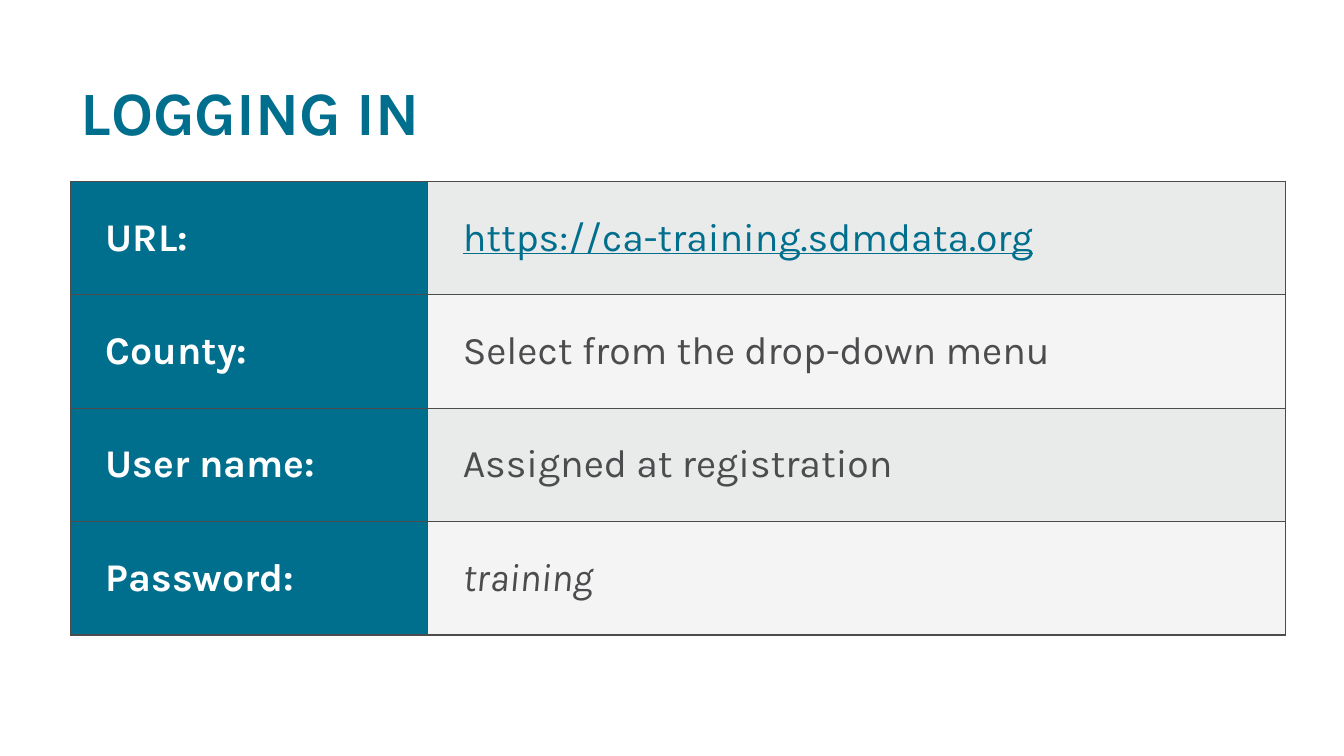
"""Build the slide that lists the login details for the training site."""
from pptx import Presentation
from pptx.dml.color import RGBColor
from pptx.enum.text import MSO_ANCHOR, PP_ALIGN
from pptx.oxml import parse_xml
from pptx.oxml.ns import nsdecls
from pptx.util import Inches, Pt

MIDDLE = MSO_ANCHOR.MIDDLE
LEFT = PP_ALIGN.LEFT
TITLE_ONLY = 5

FONT = "Karla"
TEAL = RGBColor(0x00, 0x6E, 0x8D)
WHITE = RGBColor(0xFF, 0xFF, 0xFF)
CHARCOAL = RGBColor(0x4C, 0x4C, 0x4E)
BANDS = (RGBColor(0xE9, 0xEA, 0xEA), RGBColor(0xF4, 0xF4, 0xF5))

MARGIN = Inches(0.7)
CONTENT_WIDTH = Inches(12.05)
TABLE_HEIGHT = Inches(4.5)
LABEL_WIDTH = Inches(3.54)
CELL_INDENT = Inches(0.25)

LOGIN_DETAILS = (
    ("URL:", "https://ca-training.sdmdata.org", {"color": TEAL, "underline": True}),
    ("County:", "Select from the drop-down menu", {}),
    ("User name:", "Assigned at registration", {}),
    ("Password:", "training", {"italic": True}),
)


def format_runs(paragraph, size, color, bold=False, italic=False, underline=False):
    for run in paragraph.runs:
        font = run.font
        font.name = FONT
        font.size = Pt(size)
        font.color.rgb = color
        font.bold = bold
        font.italic = italic
        font.underline = underline


def add_title(slide, text):
    title = slide.shapes.title
    title.left, title.top = MARGIN, Inches(0.4)
    title.width, title.height = CONTENT_WIDTH, Inches(1.4)
    title.text_frame.text = text
    title.text_frame.vertical_anchor = MIDDLE
    paragraph = title.text_frame.paragraphs[0]
    paragraph.alignment = LEFT
    format_runs(paragraph, 44, TEAL, bold=True)


def add_borders(cell):
    properties = cell._tc.get_or_add_tcPr()
    for side in ("lnL", "lnR", "lnT", "lnB"):
        properties.append(parse_xml(
            f'<a:{side} {nsdecls("a")} w="{Pt(1)}"><a:solidFill>'
            f'<a:srgbClr val="{CHARCOAL}"/></a:solidFill></a:{side}>'))


def fill_cell(cell, text, fill, color, **style):
    add_borders(cell)
    cell.fill.solid()
    cell.fill.fore_color.rgb = fill
    cell.vertical_anchor = MIDDLE
    cell.text_frame.text = text
    paragraph = cell.text_frame.paragraphs[0]
    paragraph._p.get_or_add_pPr().set("marL", str(CELL_INDENT))
    format_runs(paragraph, 28, color, **style)


def add_login_table(slide):
    frame = slide.shapes.add_table(
        len(LOGIN_DETAILS), 2, MARGIN, Inches(1.8), CONTENT_WIDTH, TABLE_HEIGHT)
    table = frame.table
    table.first_row = False
    table.horz_banding = False
    table.columns[0].width = LABEL_WIDTH
    table.columns[1].width = CONTENT_WIDTH - LABEL_WIDTH
    for row, (label, value, style) in enumerate(LOGIN_DETAILS):
        fill_cell(table.cell(row, 0), label, TEAL, WHITE, bold=True)
        value_style = {"color": CHARCOAL, **style}
        fill_cell(table.cell(row, 1), value, BANDS[row % 2], **value_style)


def main():
    presentation = Presentation()
    presentation.slide_width = Inches(13.33)
    presentation.slide_height = Inches(7.5)
    slide = presentation.slides.add_slide(presentation.slide_layouts[TITLE_ONLY])
    add_title(slide, "LOGGING IN")
    add_login_table(slide)
    presentation.save("out.pptx")


if __name__ == "__main__":
    main()
